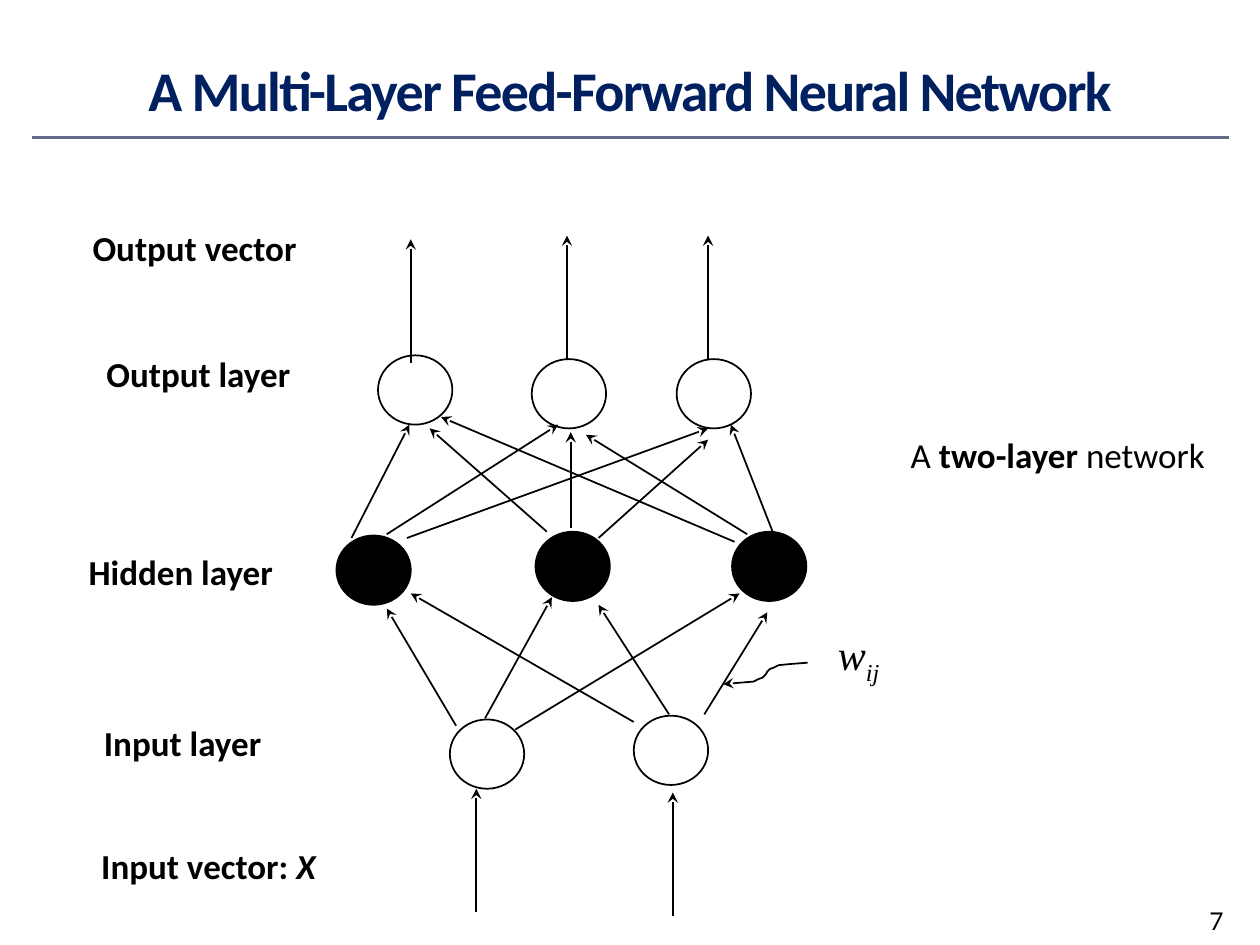
from lxml.etree import SubElement
from pptx import Presentation
from pptx.dml.color import RGBColor
from pptx.enum.shapes import MSO_CONNECTOR as Connector, MSO_SHAPE as Shape
from pptx.enum.text import MSO_ANCHOR as Anchor, PP_ALIGN as Align
from pptx.oxml.ns import qn
from pptx.util import Inches, Pt

BLACK, NAVY, SLATE = "000000", "002060", "646B86"
NODE_WIDTH, NODE_HEIGHT = 0.59, 0.55
SIGNAL_LENGTH = 0.98

# Node corners and arrow ends are measured from the corner of the network box.
OUTPUT_NODES = [(0.5, 1.32), (1.72, 1.35), (2.87, 1.35)]
HIDDEN_NODES = [(0.17, 2.75), (1.75, 2.72), (3.31, 2.72)]
INPUT_NODES = [(1.07, 4.21), (2.53, 4.18)]
INPUT_TO_HIDDEN = [
    ((1.12, 4.26), (0.57, 3.33)), ((1.35, 4.2), (1.88, 3.24)),
    ((1.59, 4.29), (3.37, 3.21)), ((2.53, 4.23), (0.76, 3.21)),
    ((2.81, 4.17), (2.25, 3.3)), ((3.09, 4.17), (3.59, 3.36)),
]
HIDDEN_TO_OUTPUT = [
    ((0.29, 2.77), (0.75, 1.87)), ((0.57, 2.74), (1.93, 1.87)),
    ((0.73, 2.77), (3.12, 1.9)), ((3.33, 2.8), (1, 1.81)),
    ((3.64, 2.74), (3.3, 1.87)), ((3.43, 2.74), (2.15, 1.95)),
    ((1.84, 2.72), (0.91, 1.9)), ((2.03, 2.69), (2.03, 1.93)),
    ((2.25, 2.77), (3.12, 1.99)),
]
SIGNAL_STARTS = [(1.28, 5.74), (2.84, 5.77), (0.76, 1.38), (2, 1.35), (3.12, 1.35)]
POINTER = [
    (0.67, 0), (0.54, 0.01), (0.44, 0.02), (0.4, 0.04), (0.37, 0.05),
    (0.35, 0.07), (0.34, 0.09), (0.33, 0.1), (0.31, 0.12), (0.28, 0.13),
    (0.24, 0.15), (0.12, 0.16), (0, 0.17),
]
LABELS = [
    ("Output vector", 0.48, 1.75, 2.13), ("Output layer", 0.6, 2.75, 1.95),
    ("Hidden layer", 0.45, 4.32, 1.97), ("Input layer", 0.57, 5.68, 1.76),
    ("Input vector: ", 0.5, 6.65, 2.31),
]


def color(value):
    return RGBColor.from_string(value)


def set_line(shape, value=BLACK, width=1, arrow=False):
    shape.line.color.rgb = color(value)
    shape.line.width = Pt(width)
    if arrow:
        SubElement(shape.line._get_or_add_ln(), qn("a:tailEnd"), type="stealth")


def add_line(slide, start, end, **style):
    line = slide.shapes.add_connector(
        Connector.STRAIGHT, *(Inches(value) for value in (*start, *end)))
    set_line(line, **style)
    SubElement(line._element.spPr, qn("a:effectLst"))


def add_text(slide, box, text, size=20, font="Calibri", bold=None, italic=None,
             value=BLACK, align=Align.LEFT, wrap=False):
    shape = slide.shapes.add_textbox(*(Inches(length) for length in box))
    shape.text_frame.word_wrap = wrap
    paragraph = shape.text_frame.paragraphs[0]
    paragraph.alignment = align
    paragraph.font.size = Pt(size)
    paragraph.font.name = font
    paragraph.font.bold = bold
    paragraph.font.italic = italic
    paragraph.font.color.rgb = color(value)
    paragraph.add_run().text = text
    return shape


def add_run(shape, text):
    run = shape.text_frame.paragraphs[0].add_run()
    run.text = text
    return run


def add_header(slide, left, top, width):
    title = add_text(slide, (left, top, width, 0.75),
                     "A Multi-Layer Feed-Forward Neural Network", size=32,
                     bold=True, value=NAVY, align=Align.CENTER, wrap=True)
    title.text_frame.vertical_anchor = Anchor.MIDDLE
    run = title.text_frame.paragraphs[0].runs[0]
    run.font._element.set("spc", "-100")
    add_line(slide, (left + 0.25, top + 0.76), (left + width - 0.25, top + 0.76),
             value=SLATE, width=1.5)


def add_network(slide, left, top):
    def place(point):
        return left + point[0], top + point[1]

    for corner in OUTPUT_NODES + HIDDEN_NODES + INPUT_NODES:
        x, y = place(corner)
        node = slide.shapes.add_shape(Shape.OVAL, Inches(x), Inches(y),
                                      Inches(NODE_WIDTH), Inches(NODE_HEIGHT))
        node.shadow.inherit = False
        if corner in HIDDEN_NODES:
            node.fill.solid()
            node.fill.fore_color.rgb = color(BLACK)
        else:
            node.fill.background()
        set_line(node)

    signals = [((x, y), (x, y - SIGNAL_LENGTH)) for x, y in SIGNAL_STARTS]
    for start, end in INPUT_TO_HIDDEN + HIDDEN_TO_OUTPUT + signals:
        add_line(slide, place(start), place(end), arrow=True)


def add_labels(slide, left, top):
    for text, x, y, width in LABELS:
        label = add_text(slide, (left + x, top + y, width, 0.43), text,
                         bold=True, align=Align.CENTER)
    add_run(label, "X").font.italic = True


def add_weight(slide, left, top):
    """Weight symbol with the curved pointer to its connection."""
    symbol = add_text(slide, (left + 0.8, top, 0.55, 0.5), "w", size=24,
                      font="Times New Roman", italic=True, align=Align.CENTER)
    add_run(symbol, "ij").font._element.set("baseline", "-25000")

    points = [(Inches(left + x), Inches(top + 0.32 + y)) for x, y in POINTER]
    builder = slide.shapes.build_freeform(*points[0])
    builder.add_line_segments(points[1:], close=False)
    pointer = builder.convert_to_shape()
    pointer.shadow.inherit = False
    pointer.fill.background()
    set_line(pointer, arrow=True)


def add_remark(slide, left, top):
    remark = add_text(slide, (left, top, 2.56, 0.44), "A ")
    add_run(remark, "two-layer").font.bold = True
    add_run(remark, " network")


def main():
    presentation = Presentation()
    presentation.slide_width = Inches(10)
    presentation.slide_height = Inches(7.5)
    slide = presentation.slides.add_slide(presentation.slide_layouts[6])

    add_header(slide, 0, 0.33, 10)
    add_network(slide, 2.5, 1.5)
    add_labels(slide, 0, 0)
    add_weight(slide, 5.74, 4.94)
    add_remark(slide, 7.13, 3.39)
    add_text(slide, (9.5, 7.14, 0.5, 0.36), "7", size=14, font="Lato")
    presentation.save("out.pptx")


if __name__ == "__main__":
    main()
